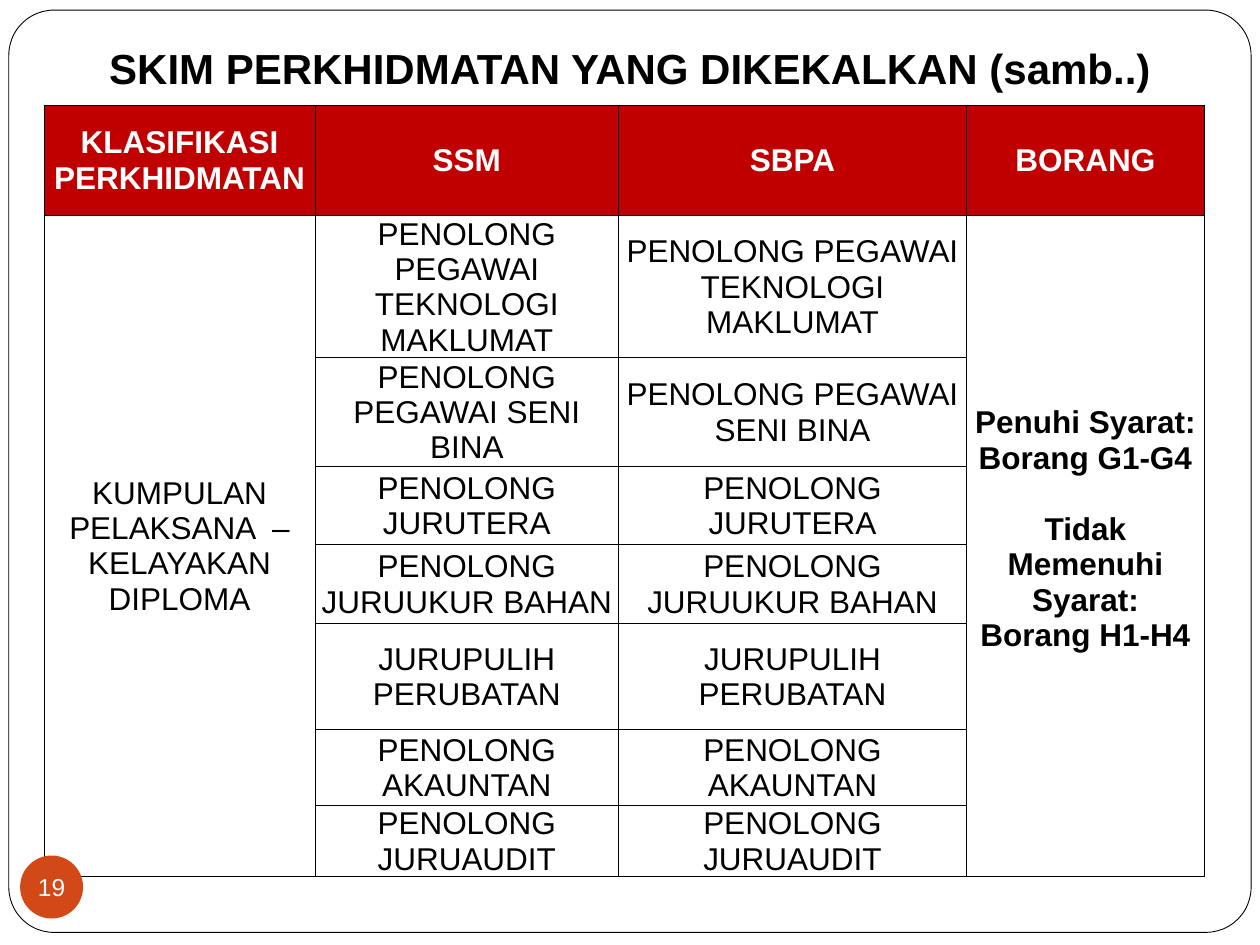
from dataclasses import dataclass

from lxml.etree import SubElement
from pptx import Presentation
from pptx.dml.color import RGBColor
from pptx.enum.shapes import MSO_SHAPE as Shape
from pptx.enum.text import MSO_ANCHOR as Anchor, PP_ALIGN as Align
from pptx.oxml.ns import qn
from pptx.util import Inches, Pt

COLORS = {"ink": "000000", "paper": "FFFFFF", "header": "C00000", "badge": "D34817"}
FONT = "Arial"
BODY_SIZE = 18


@dataclass
class CellStyle:
    color: str = "ink"
    fill: str = "paper"
    bold: bool = False
    margin: float = 0.01
    bottom: float = 0


HEADER = CellStyle("paper", "header", bold=True, margin=0)
BODY = CellStyle()
GROUP = CellStyle(margin=0)
FORMS = CellStyle(bold=True, bottom=0.28)

HEADINGS = ["KLASIFIKASI PERKHIDMATAN", "SSM", "SBPA", "BORANG"]
SCHEMES = [
    "PENOLONG PEGAWAI TEKNOLOGI MAKLUMAT",
    "PENOLONG PEGAWAI SENI BINA",
    "PENOLONG JURUTERA",
    "PENOLONG JURUUKUR BAHAN",
    "JURUPULIH PERUBATAN",
    "PENOLONG AKAUNTAN",
    "PENOLONG JURUAUDIT",
]
GROUP_TEXT = "KUMPULAN PELAKSANA  – KELAYAKAN DIPLOMA"
FORMS_TEXT = "Penuhi Syarat: Borang G1-G4\nTidak Memenuhi Syarat:\nBorang H1-H4"
COLUMN_WIDTHS = [2.15, 2.41, 2.76, 1.89]
ROW_HEIGHTS = [0.87, 1.13, 0.86, 0.62, 0.63, 0.84, 0.6, 0.56]


def rgb(name: str) -> RGBColor:
    return RGBColor.from_string(COLORS[name])


def format_text(frame, size: float, color: str, bold: bool = False) -> None:
    for paragraph in frame.paragraphs:
        paragraph.alignment = Align.CENTER
        font = paragraph.font
        font.name, font.size, font.bold = FONT, Pt(size), bold
        font.color.rgb = rgb(color)


def set_margins(target, left: float, top: float, right: float, bottom: float) -> None:
    target.margin_left, target.margin_top = Inches(left), Inches(top)
    target.margin_right, target.margin_bottom = Inches(right), Inches(bottom)


def add_borders(cell) -> None:
    properties = cell._tc.get_or_add_tcPr()
    for index, side in enumerate(("a:lnL", "a:lnR", "a:lnT", "a:lnB")):
        line = properties.makeelement(qn(side), {"w": str(Pt(0.5))})
        solid = SubElement(line, qn("a:solidFill"))
        SubElement(solid, qn("a:srgbClr"), val=COLORS["ink"])
        properties.insert(index, line)


def fill_cell(cell, text: str, style: CellStyle) -> None:
    cell.text = text
    cell.vertical_anchor = Anchor.MIDDLE
    set_margins(cell, style.margin, style.margin, style.margin, style.bottom)
    cell.fill.solid()
    cell.fill.fore_color.rgb = rgb(style.fill)
    format_text(cell.text_frame, BODY_SIZE, style.color, style.bold)


def add_filled_shape(slide, kind, box: tuple, fill: str):
    shape = slide.shapes.add_shape(kind, *map(Inches, box))
    shape.shadow.inherit = False
    shape.fill.solid()
    shape.fill.fore_color.rgb = rgb(fill)
    shape.line.fill.background()
    return shape


def add_scheme_table(slide) -> None:
    table = slide.shapes.add_table(
        len(ROW_HEIGHTS), len(COLUMN_WIDTHS), Inches(0.35), Inches(0.84),
        Inches(sum(COLUMN_WIDTHS)), Inches(sum(ROW_HEIGHTS))).table
    for column, width in zip(table.columns, COLUMN_WIDTHS):
        column.width = Inches(width)
    for row, height in zip(table.rows, ROW_HEIGHTS):
        row.height = Inches(height)

    for column, heading in enumerate(HEADINGS):
        fill_cell(table.cell(0, column), heading, HEADER)
    for row, scheme in enumerate(SCHEMES, start=1):
        for column, text in enumerate(("", scheme, scheme, "")):
            fill_cell(table.cell(row, column), text, BODY)

    # Outer columns span every scheme
    for column, text, style in ((0, GROUP_TEXT, GROUP), (3, FORMS_TEXT, FORMS)):
        first = table.cell(1, column)
        first.merge(table.cell(len(SCHEMES), column))
        fill_cell(first, text, style)
    table.cell(1, 3).text_frame.paragraphs[1].space_before = Pt(20.7)

    for cell in table.iter_cells():
        add_borders(cell)


def main() -> None:
    deck = Presentation()
    deck.slide_width, deck.slide_height = Inches(10), Inches(7.5)
    slide = deck.slides.add_slide(deck.slide_layouts[5])

    # Rounded border, sent behind the title
    border = add_filled_shape(slide, Shape.ROUNDED_RECTANGLE, (0.07, 0.08, 9.86, 7.32), "paper")
    border.adjustments[0] = 0.049
    border.line.color.rgb = rgb("ink")
    border.line.width = Pt(0.5)
    slide.shapes.title._element.addprevious(border._element)

    # Title
    title = slide.shapes.title
    title.left, title.top = Inches(0.75), Inches(0.29)
    title.width, title.height = Inches(8.5), Inches(0.55)
    title.text = "SKIM PERKHIDMATAN YANG DIKEKALKAN (samb..)"
    title.text_frame.vertical_anchor = Anchor.BOTTOM
    set_margins(title.text_frame, 0.1, 0.05, 0.1, 0.1)
    format_text(title.text_frame, 24, "ink", bold=True)

    add_scheme_table(slide)

    # Page number badge
    badge = add_filled_shape(slide, Shape.OVAL, (0.16, 6.79, 0.5, 0.5), "badge")
    badge.text = "19"
    badge.text_frame.word_wrap = False
    badge.text_frame.vertical_anchor = Anchor.MIDDLE
    set_margins(badge.text_frame, 0, 0, 0, 0)
    format_text(badge.text_frame, 14, "paper")

    deck.save("out.pptx")


if __name__ == "__main__":
    main()
